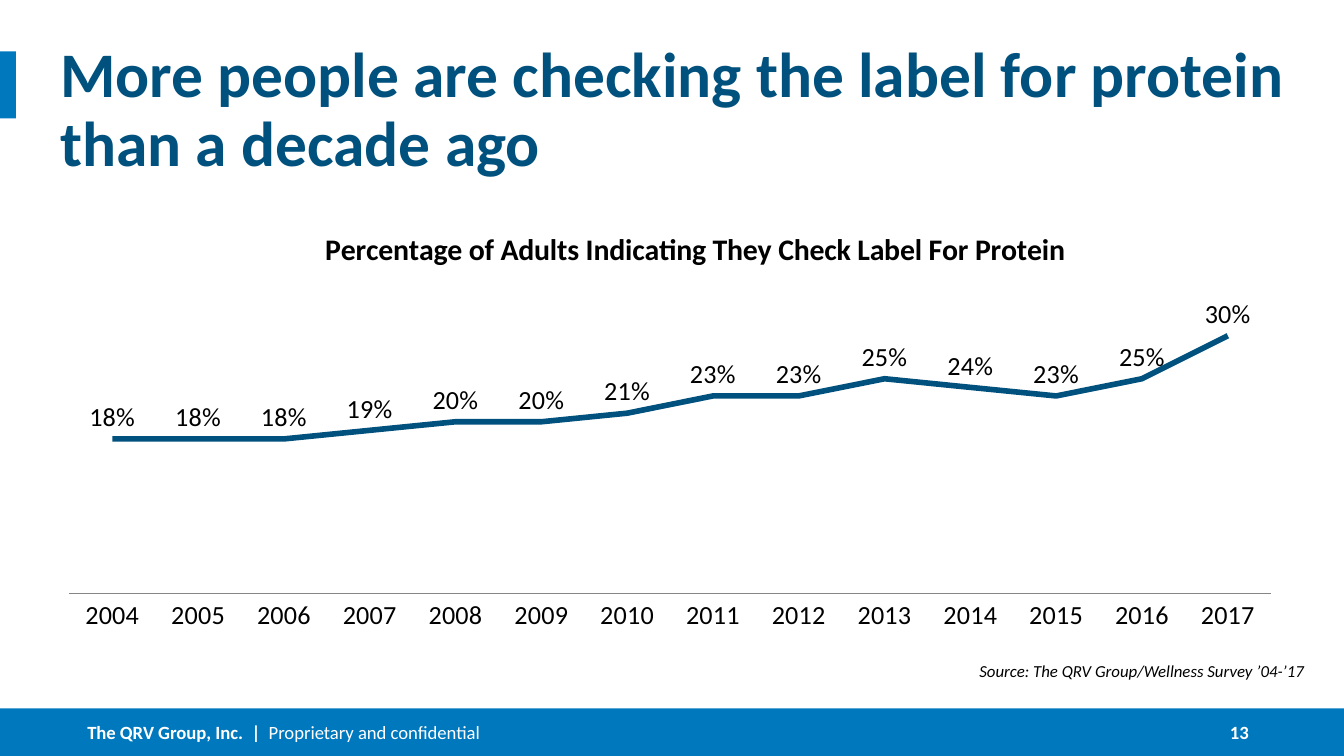
"""Build a slide with a line chart of adults who check labels for protein."""
from dataclasses import dataclass

from lxml import etree
from pptx import Presentation
from pptx import util as u
from pptx.chart import data
from pptx.dml.color import RGBColor
from pptx.enum import chart as ch
from pptx.enum import shapes, text
from pptx.oxml import ns

COLORS = {"blue": "0078BE", "navy": "00517D", "white": "FFFFFF",
          "black": "000000", "gray": "868686"}
FONT = "Calibri"
PERCENTS = [18, 18, 18, 19, 20, 20, 21, 23, 23, 25, 24, 23, 25, 30]
FIRST_YEAR = 2004


@dataclass
class Box:
    left: float
    top: float
    width: float
    height: float

    def lengths(self) -> list:
        return [u.Cm(side) for side in (self.left, self.top, self.width, self.height)]


@dataclass
class Phrase:
    words: str
    size: float
    color: str
    bold: bool = False
    italic: bool = False


@dataclass
class Caption:
    box: Box
    phrases: list[Phrase]
    anchor: text.MSO_ANCHOR = text.MSO_ANCHOR.MIDDLE
    align: text.PP_ALIGN = text.PP_ALIGN.LEFT
    line_spacing: float = 1.0


BARS = [Box(0, 13.39, 25.4, 0.9), Box(0, 0.97, 0.3, 1.27)]
CAPTIONS = [
    Caption(Box(1.65, 13.39, 10.44, 0.89),
            [Phrase("The QRV Group, Inc.  |  ", 10, "white", bold=True),
             Phrase("Proprietary and confidential", 10, "white")]),
    Caption(Box(22.33, 13.39, 1.27, 0.89), [Phrase("13", 10, "white", bold=True)],
            align=text.PP_ALIGN.RIGHT),
    Caption(Box(1.14, 0.81, 23.5, 1.27),
            [Phrase("More people are checking the label for protein than a decade ago",
                    34, "navy", bold=True)],
            anchor=text.MSO_ANCHOR.TOP, line_spacing=0.9),
    Caption(Box(1.14, 12.14, 23.5, 0.74),
            [Phrase("Source: The QRV Group/Wellness Survey ’04-’17", 9, "black", italic=True)],
            anchor=text.MSO_ANCHOR.BOTTOM, align=text.PP_ALIGN.RIGHT, line_spacing=0.85),
]


def rgb(color: str) -> RGBColor:
    return RGBColor.from_string(COLORS[color])


def style_font(font, size: float, color: str, bold: bool = False, italic: bool = False) -> None:
    font.name, font.size = FONT, u.Pt(size)
    font.bold, font.italic = bold, italic
    font.color.rgb = rgb(color)


def draw_bar(slide, box: Box) -> None:
    bar = slide.shapes.add_shape(shapes.MSO_SHAPE.RECTANGLE, *box.lengths())
    bar.shadow.inherit = False
    bar.fill.solid()
    bar.fill.fore_color.rgb = rgb("blue")
    bar.line.fill.background()


def draw_caption(slide, caption: Caption) -> None:
    frame = slide.shapes.add_textbox(*caption.box.lengths()).text_frame
    frame.word_wrap = True
    frame.vertical_anchor = caption.anchor
    frame.margin_left = frame.margin_right = frame.margin_top = frame.margin_bottom = 0
    paragraph = frame.paragraphs[0]
    paragraph.alignment = caption.align
    paragraph.line_spacing = caption.line_spacing
    for phrase in caption.phrases:
        run = paragraph.add_run()
        run.text = phrase.words
        style_font(run.font, phrase.size, phrase.color, phrase.bold, phrase.italic)


def place(element, **settings) -> None:
    """Give a chart title or plot area a manual layout."""
    for old in element.findall(ns.qn("c:layout")):
        element.remove(old)
    layout = etree.Element(ns.qn("c:layout"))
    manual = etree.SubElement(layout, ns.qn("c:manualLayout"))
    for tag, value in settings.items():
        etree.SubElement(manual, ns.qn(f"c:{tag}")).set("val", str(value))
    heading = element.find(ns.qn("c:tx"))
    element.insert(0 if heading is None else 1, layout)


def draw_trend(slide, box: Box) -> None:
    figures = data.CategoryChartData(number_format="0%")
    figures.categories = [str(FIRST_YEAR + step) for step in range(len(PERCENTS))]
    figures.add_series("Series 1", [percent / 100 for percent in PERCENTS])
    trend = slide.shapes.add_chart(ch.XL_CHART_TYPE.LINE, *box.lengths(), figures).chart
    style_font(trend.font, 12, "black")
    trend.has_legend = False

    trend.has_title = True
    heading = trend.chart_title.text_frame.paragraphs[0].add_run()
    heading.text = "Percentage of Adults Indicating They Check Label For Protein"
    style_font(heading.font, 16, "black", bold=True)
    place(trend.chart_title._element, xMode="edge", yMode="edge", x=0.22, y=0.03)
    place(trend._chartSpace.chart.plotArea, layoutTarget="inner", xMode="edge",
          yMode="edge", x=0.02, y=0.19, w=0.96, h=0.7)

    years, shares = trend.category_axis, trend.value_axis
    years.major_tick_mark = ch.XL_TICK_MARK.NONE
    years.format.line.color.rgb = rgb("gray")
    style_font(years.tick_labels.font, 14, "black")
    shares.minimum_scale, shares.maximum_scale = 0, 0.35
    shares.has_major_gridlines = False
    shares.visible = False

    plot = trend.plots[0]
    plot.vary_by_categories = False
    line = plot.series[0]
    line.smooth = False
    line.format.line.color.rgb = rgb("navy")
    line.format.line.width = u.Pt(3)
    labels = line.data_labels
    labels.show_value = True
    labels.position = ch.XL_LABEL_POSITION.ABOVE
    labels.number_format, labels.number_format_is_linked = "0%", False
    style_font(labels.font, 14, "black")


def main() -> None:
    deck = Presentation()
    deck.slide_width, deck.slide_height = u.Cm(25.4), u.Cm(14.29)
    slide = deck.slides.add_slide(deck.slide_layouts[6])
    for bar in BARS:
        draw_bar(slide, bar)
    for caption in CAPTIONS:
        draw_caption(slide, caption)
    draw_trend(slide, Box(0.84, 3.99, 23.65, 8.13))
    deck.save("out.pptx")


if __name__ == "__main__":
    main()
